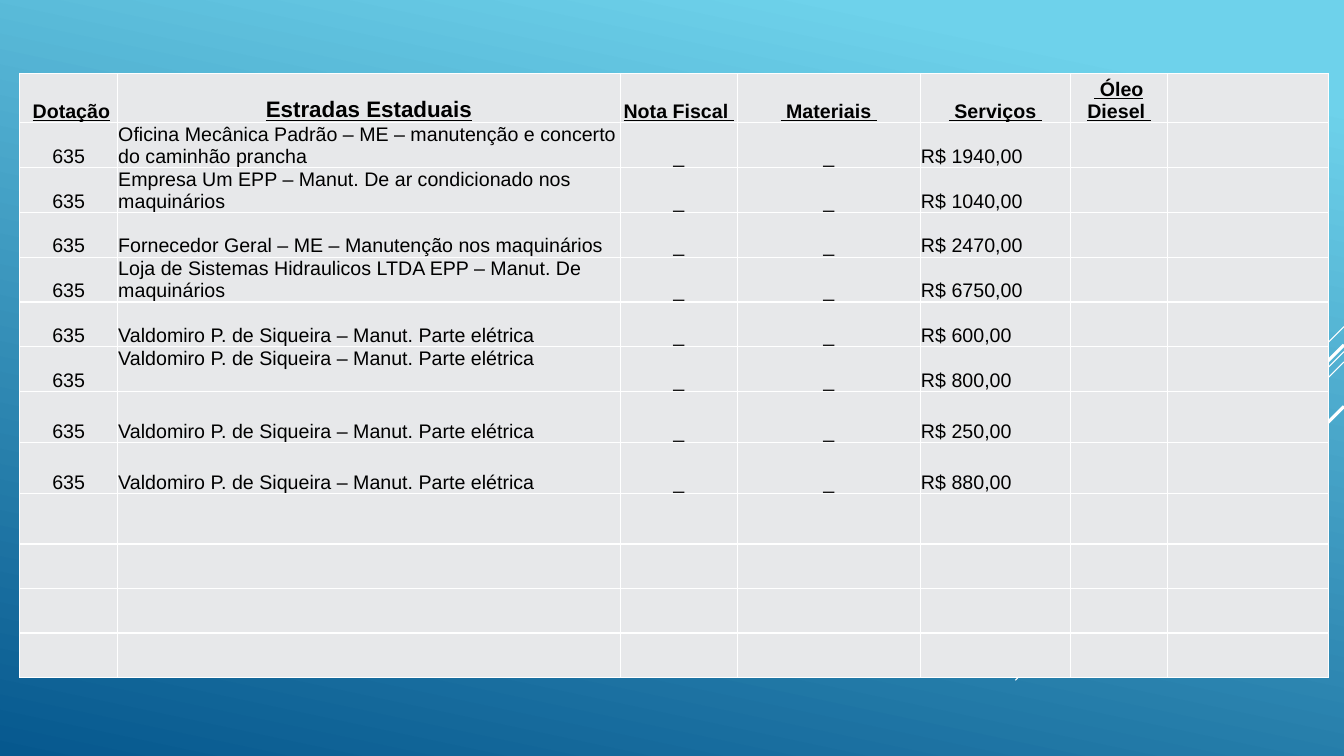
from lxml import etree
from pptx import Presentation
from pptx.dml.color import RGBColor
from pptx.enum.shapes import MSO_CONNECTOR
from pptx.enum.text import MSO_ANCHOR as Anchor, PP_ALIGN as Align
from pptx.oxml.ns import qn
from pptx.util import Cm, Pt

COLORS = {
    "sky": "6ED2EB",
    "deep": "06588E",
    "cell": "E7E8EA",
    "rule": "FFFFFF",
    "text": "000000",
}
FONT = "Arial"

HEADERS = ["Dotação", "Estradas Estaduais", "Nota Fiscal ", " Materiais ",
           " Serviços ", " Óleo Diesel ", ""]
ALLOTMENT, NO_VALUE = "635", "_"
ELECTRICAL = "Valdomiro P. de Siqueira – Manut. Parte elétrica"
EXPENSES = [
    ("Oficina Mecânica Padrão – ME – manutenção e concerto do caminhão prancha",
     "R$ 1940,00"),
    ("Empresa Um EPP – Manut. De ar condicionado nos maquinários", "R$ 1040,00"),
    ("Fornecedor Geral – ME – Manutenção nos maquinários", "R$ 2470,00"),
    ("Loja de Sistemas Hidraulicos LTDA EPP – Manut. De maquinários", "R$ 6750,00"),
    (ELECTRICAL, "R$ 600,00"),
    (ELECTRICAL, "R$ 800,00"),
    (ELECTRICAL, "R$ 250,00"),
    (ELECTRICAL, "R$ 880,00"),
]
EMPTY_ROWS = 4
TOP_ANCHORED = (6, 1)
LEFT_COLUMNS = (1, 4)

SLIDE_WIDTH, SLIDE_HEIGHT = 33.87, 19.05
TABLE_LEFT, TABLE_TOP = 0.5, 1.85
COLUMN_WIDTHS = [2.46, 12.67, 2.95, 4.61, 3.79, 2.44, 4.06]
ROW_HEIGHTS = [1.24] + [1.13] * 6 + [1.28] * 3 + [1.12] * 3

# Diagonals at 45 degrees from the right edge: start height, run, line width
DIAGONALS = [
    (8.23, 2.54, 0.75),
    (8.86, 8.28, 0.75),
    (9.12, 5.27, 0.75),
    (8.69, 4.85, 2.25),
    (10.24, 3.53, 2.25),
]


def rgb(name):
    return RGBColor.from_string(COLORS[name])


def paint_background(slide):
    fill = slide.background.fill
    fill.gradient()
    fill.gradient_angle = 258
    for stop, position, name in zip(fill.gradient_stops, (0.1, 1), ("sky", "deep")):
        stop.position = position
        stop.color.rgb = rgb(name)


def draw_diagonal(slide, start, run, width):
    diagonal = slide.shapes.add_connector(
        MSO_CONNECTOR.STRAIGHT, Cm(SLIDE_WIDTH), Cm(start),
        Cm(SLIDE_WIDTH - run), Cm(start + run))
    diagonal.line.color.rgb = rgb("rule")
    diagonal.line.width = Pt(width)
    etree.SubElement(diagonal._element.spPr, qn("a:effectLst"))


def add_borders(cell):
    properties = cell._tc.get_or_add_tcPr()
    for position, side in enumerate(("lnL", "lnR", "lnT", "lnB")):
        border = etree.Element(qn(f"a:{side}"), w=str(Pt(1)))
        solid = etree.SubElement(border, qn("a:solidFill"))
        etree.SubElement(solid, qn("a:srgbClr"), val=COLORS["rule"])
        properties.insert(position, border)


def write_cell(cell, text, row, column):
    is_header = row == 0
    cell.fill.solid()
    cell.fill.fore_color.rgb = rgb("cell")
    add_borders(cell)
    cell.margin_left = cell.margin_right = cell.margin_top = Cm(0.02)
    cell.margin_bottom = 0
    cell.vertical_anchor = Anchor.TOP if (row, column) == TOP_ANCHORED else Anchor.BOTTOM

    paragraph = cell.text_frame.paragraphs[0]
    centred = is_header or column not in LEFT_COLUMNS
    paragraph.alignment = Align.CENTER if centred else Align.LEFT
    font = paragraph.font
    font.name = FONT
    font.size = Pt(16 if is_header and column == 1 else 14)
    font.bold = is_header
    font.color.rgb = rgb("text")
    if not text:
        return
    if is_header and column == 0:
        paragraph.add_run().text = " "
    run = paragraph.add_run()
    run.text = text
    run.font.underline = is_header


def add_expense_table(slide):
    rows = [HEADERS]
    rows += [[ALLOTMENT, service, NO_VALUE, NO_VALUE, price, "", ""]
             for service, price in EXPENSES]
    rows += [[""] * len(HEADERS)] * EMPTY_ROWS
    table = slide.shapes.add_table(
        len(rows), len(HEADERS), Cm(TABLE_LEFT), Cm(TABLE_TOP),
        Cm(sum(COLUMN_WIDTHS)), Cm(sum(ROW_HEIGHTS))).table
    table.first_row = table.horz_banding = False
    for column, width in zip(table.columns, COLUMN_WIDTHS):
        column.width = Cm(width)
    for row, height in zip(table.rows, ROW_HEIGHTS):
        row.height = Cm(height)
    for r, texts in enumerate(rows):
        for c, text in enumerate(texts):
            write_cell(table.cell(r, c), text, r, c)


def main():
    deck = Presentation()
    deck.slide_width, deck.slide_height = Cm(SLIDE_WIDTH), Cm(SLIDE_HEIGHT)
    slide = deck.slides.add_slide(deck.slide_layouts[6])
    paint_background(slide)
    for diagonal in DIAGONALS:
        draw_diagonal(slide, *diagonal)
    add_expense_table(slide)
    deck.save("out.pptx")


if __name__ == "__main__":
    main()
